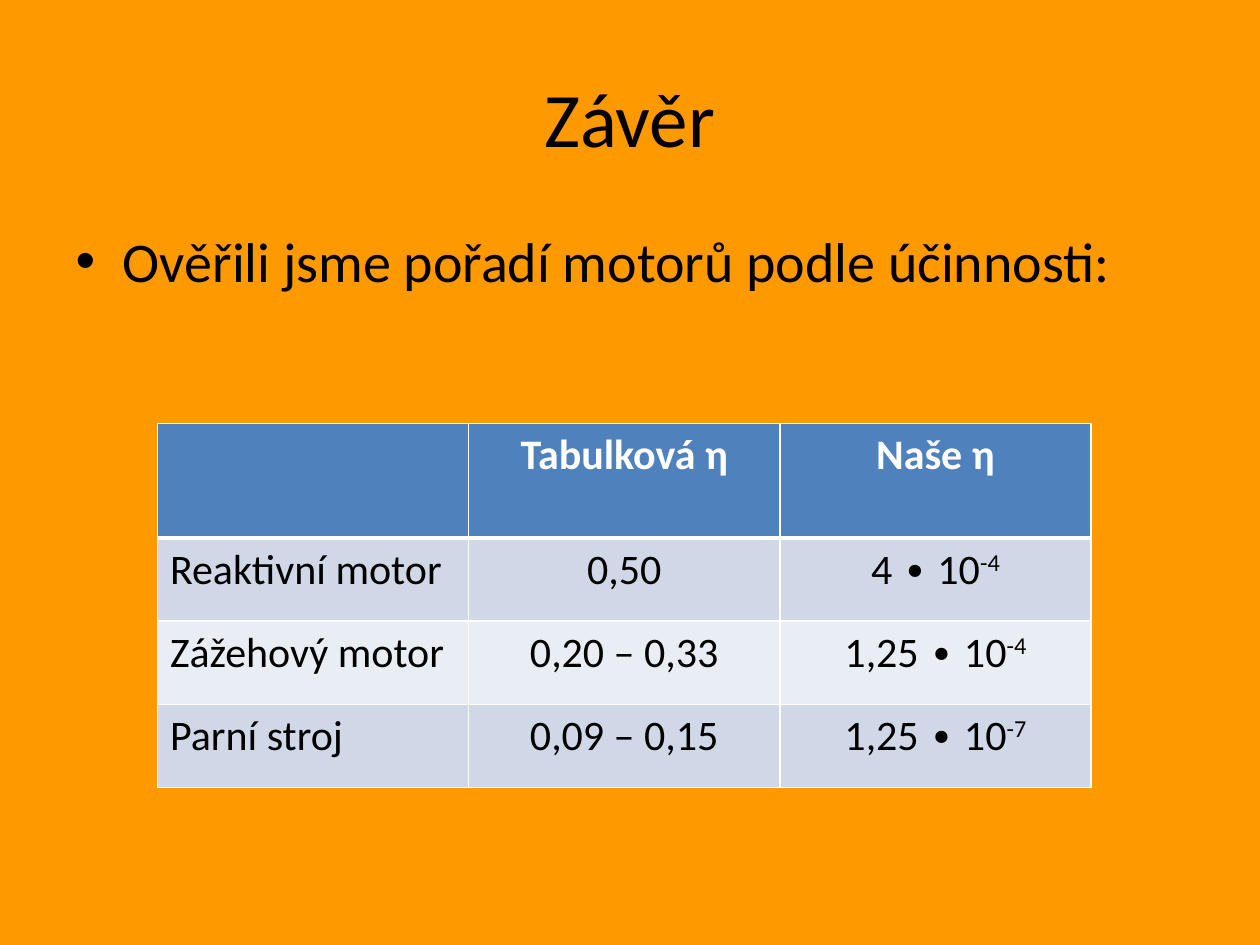
from lxml.etree import SubElement
from pptx import Presentation
from pptx.dml.color import RGBColor
from pptx.enum.text import MSO_ANCHOR, PP_ALIGN
from pptx.oxml.ns import qn
from pptx.util import Inches, Pt

FONT = "Calibri"
BLACK, WHITE, ORANGE = "000000", "FFFFFF", "FF9900"
HEADER_FILL, BAND_FILLS = "4F81BD", ("D0D8E8", "E9EDF4")

# A "^" separates a number from its exponent.
ROWS = [
    ("", "Tabulková η", "Naše η"),
    ("Reaktivní motor", "0,50", "4 ∙ 10^-4"),
    ("Zážehový motor", "0,20 – 0,33", "1,25 ∙ 10^-4"),
    ("Parní stroj", "0,09 – 0,15", "1,25 ∙ 10^-7"),
]
COL_WIDTH, HEADER_HEIGHT, ROW_HEIGHT = 2.47, 0.91, 0.66


def rgb(value):
    return RGBColor.from_string(value)


def style_run(r, size, color=BLACK, bold=False):
    r.font.name = FONT
    r.font.size = Pt(size)
    r.font.bold = bold
    r.font.color.rgb = rgb(color)


def fill_placeholder(sp, text, box, size):
    sp.left, sp.top, sp.width, sp.height = map(Inches, box)
    sp.text_frame.text = text
    p = sp.text_frame.paragraphs[0]
    style_run(p.runs[0], size)
    return p


def set_borders(cell, bottom=1):
    """Draw white cell edges; bottom is the width of the lower one in points."""
    tc_pr = cell._tc.get_or_add_tcPr()
    for i, (side, width) in enumerate(zip("LRTB", (1, 1, 1, bottom))):
        ln = SubElement(tc_pr, qn(f"a:ln{side}"), w=str(Pt(width)))
        SubElement(SubElement(ln, qn("a:solidFill")), qn("a:srgbClr"), val=WHITE)
        tc_pr.insert(i, ln)


def fill_cell(cell, text, fill, header, centered):
    cell.fill.solid()
    cell.fill.fore_color.rgb = rgb(fill)
    set_borders(cell, bottom=3 if header else 1)
    p = cell.text_frame.paragraphs[0]
    p.alignment = PP_ALIGN.CENTER if centered else PP_ALIGN.LEFT
    base, _, exponent = text.partition("^")
    for part in filter(None, (base, exponent)):
        r = p.add_run()
        r.text = part
        style_run(r, 24, WHITE if header else BLACK, header)
    if exponent:
        r.font._element.set("baseline", "30000")


def add_efficiency_table(slide):
    n_rows, n_cols = len(ROWS), len(ROWS[0])
    height = HEADER_HEIGHT + ROW_HEIGHT * (n_rows - 1)
    table = slide.shapes.add_table(
        n_rows, n_cols, Inches(1.25), Inches(3.36),
        Inches(COL_WIDTH * n_cols), Inches(height)).table
    for col in table.columns:
        col.width = Inches(COL_WIDTH)
    for i, texts in enumerate(ROWS):
        header = i == 0
        table.rows[i].height = Inches(HEADER_HEIGHT if header else ROW_HEIGHT)
        fill = HEADER_FILL if header else BAND_FILLS[(i - 1) % 2]
        for j, text in enumerate(texts):
            fill_cell(table.cell(i, j), text, fill, header, centered=j > 0)


def main():
    prs = Presentation()
    prs.slide_width, prs.slide_height = Inches(10), Inches(7.5)
    slide = prs.slides.add_slide(prs.slide_layouts[1])
    slide.background.fill.solid()
    slide.background.fill.fore_color.rgb = rgb(ORANGE)

    title, body = slide.placeholders
    p = fill_placeholder(title, "Závěr", (0.5, 0.3, 9, 1.25), 44)
    p.alignment = PP_ALIGN.CENTER
    title.text_frame.vertical_anchor = MSO_ANCHOR.MIDDLE
    fill_placeholder(body, "Ověřili jsme pořadí motorů podle účinnosti:",
                     (0.5, 1.75, 9, 4.95), 32)
    add_efficiency_table(slide)
    prs.save("out.pptx")


if __name__ == "__main__":
    main()
